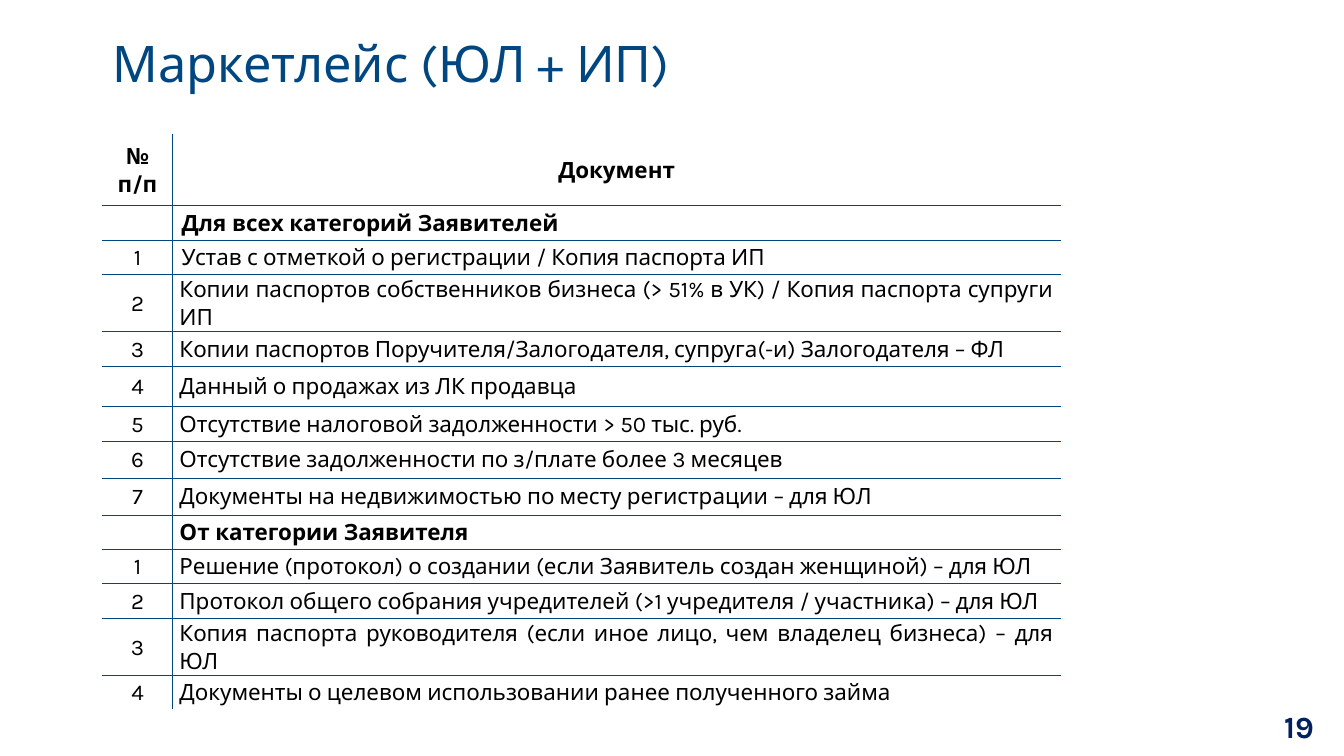
from lxml.etree import SubElement
from pptx import Presentation
from pptx.dml.color import RGBColor
from pptx.enum.text import MSO_ANCHOR as Anchor, PP_ALIGN as Align
from pptx.oxml.ns import qn
from pptx.util import Pt

FONT = "Karla"
COLORS = {"blue": "004680", "navy": "002060", "black": "000000", "white": "FFFFFF"}
COLUMN_WIDTHS = (50, 634.5)
HEADER = ("№ п/п", "Документ", 50.75)
# Number, document, row height; a row without a number is a section heading
DOCUMENTS = [
    ("", "Для всех категорий Заявителей", 24.5),
    ("1", "Устав с отметкой о регистрации / Копия паспорта ИП", 24.5),
    ("2", "Копии паспортов собственников бизнеса (> 51% в УК) / Копия паспорта супруги ИП", 28),
    ("3", "Копии паспортов Поручителя/Залогодателя, супруга(-и) Залогодателя – ФЛ", 24.5),
    ("4", "Данный о продажах из ЛК продавца", 29),
    ("5", "Отсутствие налоговой задолженности > 50 тыс. руб.", 24.5),
    ("6", "Отсутствие задолженности по з/плате более 3 месяцев", 26.5),
    ("7", "Документы на недвижимостью по месту регистрации – для ЮЛ", 26.5),
    ("", "От категории Заявителя", 24.5),
    ("1", "Решение (протокол) о создании (если Заявитель создан женщиной) – для ЮЛ", 24.5),
    ("2", "Протокол общего собрания учредителей (>1 учредителя / участника) – для ЮЛ", 24.5),
    ("3", "Копия паспорта руководителя (если иное лицо, чем владелец бизнеса) – для ЮЛ", 25),
    ("4", "Документы о целевом использовании ранее полученного займа", 24.5),
]
INDENTED_ROWS = (1, 2)


def write(paragraph, text, size, color, bold=False, align=Align.LEFT, spacing=1.0):
    paragraph.alignment = align
    paragraph.line_spacing = spacing
    if text:
        run = paragraph.add_run()
        run.text = text
        run.font.name = FONT
        run.font.size = Pt(size)
        run.font.bold = bold
        run.font.color.rgb = RGBColor.from_string(COLORS[color])


def add_label(slide, box, text, size, color, **style):
    frame = slide.shapes.add_textbox(*map(Pt, box)).text_frame
    frame.word_wrap = True
    frame.vertical_anchor = Anchor.MIDDLE
    write(frame.paragraphs[0], text, size, color, **style)


def set_borders(cell, sides):
    """Draw inner sides in blue and outer sides in white."""
    properties = cell._tc.get_or_add_tcPr()
    for position, (side, inner) in enumerate(sides.items()):
        width, color = (0.75, "blue") if inner else (1, "white")
        line = SubElement(properties, qn(f"a:ln{side}"), w=str(Pt(width)))
        fill = SubElement(line, qn("a:solidFill"))
        SubElement(fill, qn("a:srgbClr"), val=COLORS[color])
        properties.insert(position, line)


def fill_cell(cell, text, bold, align, margin):
    cell.fill.solid()
    cell.fill.fore_color.rgb = RGBColor.from_string(COLORS["white"])
    cell.vertical_anchor = Anchor.MIDDLE
    cell.margin_left = cell.margin_right = Pt(margin)
    cell.margin_top = cell.margin_bottom = 0
    write(cell.text_frame.paragraphs[0], text, 16, "black", bold, align, 1.07)


def add_document_table(slide):
    rows = [HEADER, *DOCUMENTS]
    height = sum(row[2] for row in rows)
    table = slide.shapes.add_table(
        len(rows), 2, Pt(73.25), Pt(96.25), Pt(sum(COLUMN_WIDTHS)), Pt(height)).table
    for column, width in zip(table.columns, COLUMN_WIDTHS):
        column.width = Pt(width)
    for index, (number, document, row_height) in enumerate(rows):
        table.rows[index].height = Pt(row_height)
        is_header = index == 0
        number_cell, document_cell = table.cell(index, 0), table.cell(index, 1)
        fill_cell(number_cell, number, is_header, Align.CENTER, 1.5)
        fill_cell(document_cell, document, is_header or not number,
                  Align.CENTER if is_header else Align.JUSTIFY, 5)
        if index in INDENTED_ROWS:
            document_cell.margin_left = Pt(6.5)
        above, below = not is_header, index < len(rows) - 1
        set_borders(number_cell, {"L": False, "R": True, "T": above, "B": below})
        set_borders(document_cell, {"L": True, "R": False, "T": above, "B": below})


def main():
    deck = Presentation()
    deck.slide_width, deck.slide_height = Pt(960), Pt(540)
    slide = deck.slides.add_slide(deck.slide_layouts[6])
    add_label(slide, (725, 507.5, 220.5, 22.5), "19", 22, "navy", bold=True, align=Align.RIGHT)
    add_label(slide, (73.5, 14.5, 859.5, 65), "Маркетлейс (ЮЛ + ИП)", 36, "blue", spacing=0.9)
    add_document_table(slide)
    deck.save("out.pptx")


if __name__ == "__main__":
    main()
